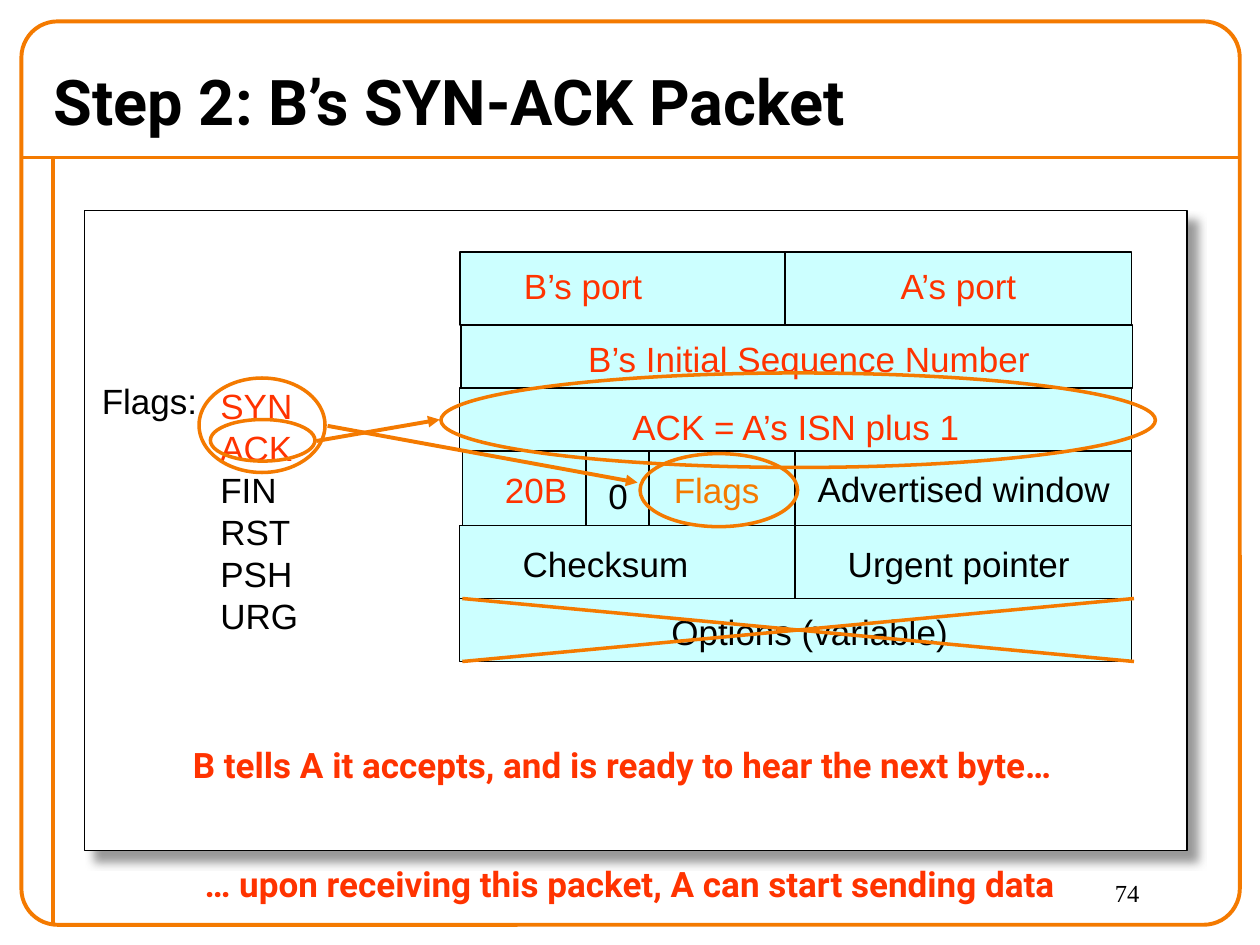
"""Build the slide on the SYN-ACK packet of the TCP handshake."""
import pptx
import pptx.util
import pptx.dml.color
import pptx.enum.shapes
import pptx.enum.text
import pptx.oxml
import pptx.oxml.ns
from lxml import etree

Inches, Pt = pptx.util.Inches, pptx.util.Pt
RGB = pptx.dml.color.RGBColor
KIND = pptx.enum.shapes.MSO_SHAPE
TEXT = pptx.enum.text
ORANGE = RGB(0xF4, 0x7A, 0x00)
RED = RGB(0xFF, 0x33, 0x00)
BLACK = RGB(0, 0, 0)
WHITE = RGB(0xFF, 0xFF, 0xFF)
CYAN = RGB(0xCC, 0xFF, 0xFF)

TITLE = "Step 2: B’s SYN-ACK Packet"
NUMBER = "74"
FRAME = (0.17, 0.17, 9.67, 7.17)
RULES = [(0.17, 1.25, 9.83, 1.25), (0.42, 1.25, 0.42, 7.33)]
PANEL = (0.67, 1.67, 8.75, 5.08)

TOP = 2
ROWS = [
    (0.58, [(3.65, 2.58), (6.23, 2.75)],
     [("B’s port", 4.06, 2.05, 1.16, RED), ("A’s port", 7.05, 2.05, 1.16, RED)]),
    (0.5, [(3.66, 5.33)],
     [("B’s Initial Sequence Number", 4.57, 2.63, 3.75, RED)]),
    (0.5, [(3.65, 5.33)],
     [("ACK = A’s ISN plus 1", 4.92, 3.17, 2.85, RED)]),
    (0.59, [(3.67, 2.67), (6.31, 2.67)],
     [("Advertised window", 6.39, 3.66, 2.55, BLACK),
      ("20B", 3.91, 3.67, 0.74, RED), ("0", 4.73, 3.72, 0.36, BLACK),
      ("Flags", 5.25, 3.67, 0.9, ORANGE)]),
    (0.58, [(3.65, 2.67), (6.31, 2.67)],
     [("Checksum", 4.05, 4.26, 1.55, BLACK),
      ("Urgent pointer", 6.63, 4.26, 2, BLACK)]),
    (0.5, [(3.65, 5.33)],
     [("Options (variable)", 5.23, 4.8, 2.43, BLACK)]),
]
SPLITS = [(x, 3.58, x, 4.17) for x in (4.65, 5.15)]
FLAGS = [("SYN", RED), ("ACK", RED), ("FIN", BLACK),
         ("RST", BLACK), ("PSH", BLACK), ("URG", BLACK)]
NOTES = [
    ("B tells A it accepts, and is ready to hear the next byte…", 1.18, 5.85, 7.52),
    ("… upon receiving this packet, A can start sending data", 1.28, 6.8, 7.44),
]
LINKS = [
    ((2.6, 3.38, 5.06, 3.83), [(1.58, 3, 1, 0.75), (5.08, 3.6, 1.25, 0.58)]),
    ((2.51, 3.5, 3.49, 3.33), [(1.67, 3.33, 0.83, 0.33), (3.5, 2.96, 5.67, 0.75)]),
]
CROSS = [(3.67, 4.75, 9, 5.25), (3.67, 5.25, 9, 4.75)]

deck = pptx.Presentation()
deck.slide_width, deck.slide_height = Inches(10), Inches(7.5)
slide = deck.slides.add_slide(deck.slide_layouts[6])
shapes = slide.shapes


def add_box(kind, at, fill, color, width):
    """Draw a preset shape, unfilled when fill is None."""
    box = shapes.add_shape(kind, *map(Inches, at))
    box.shadow.inherit = False
    if fill is None:
        box.fill.background()
    else:
        box.fill.solid()
        box.fill.fore_color.rgb = fill
    box.line.color.rgb = color
    box.line.width = Pt(width)
    return box


def add_line(ends, color, width, arrow=False):
    """Draw a straight line, with an arrowhead at its end if asked."""
    line = shapes.add_connector(
        pptx.enum.shapes.MSO_CONNECTOR.STRAIGHT, *map(Inches, ends))
    line.line.color.rgb = color
    line.line.width = Pt(width)
    props = line._element.spPr
    if arrow:
        etree.SubElement(props.find(pptx.oxml.ns.qn("a:ln")),
                         pptx.oxml.ns.qn("a:tailEnd"), type="triangle")
    etree.SubElement(props, pptx.oxml.ns.qn("a:effectLst"))


def add_text(items, at, size=20, face="Arial", bold=False, wrap=False,
             align=TEXT.PP_ALIGN.LEFT, anchor=TEXT.MSO_ANCHOR.TOP):
    """Write one paragraph for each pair of words and colour."""
    box = shapes.add_textbox(*map(Inches, at))
    frame = box.text_frame
    frame.word_wrap = wrap
    if not wrap:
        frame.auto_size = TEXT.MSO_AUTO_SIZE.SHAPE_TO_FIT_TEXT
    frame.vertical_anchor = anchor
    frame.text = "\n".join(words for words, _ in items)
    for para, (_, color) in zip(frame.paragraphs, items):
        para.alignment = align
        font = para.font
        font.name, font.size, font.bold = face, Pt(size), bold
        font.color.rgb = color


def add_shade(box):
    """Give a box a soft grey shadow down and to the right."""
    effect = box._element.spPr.find(pptx.oxml.ns.qn("a:effectLst"))
    effect.append(pptx.oxml.parse_xml(
        f'<a:outerShdw {pptx.oxml.ns.nsdecls("a")} blurRad="{Pt(5)}" '
        f'dist="{Pt(8.5)}" dir="2700000" algn="tl" rotWithShape="0">'
        '<a:srgbClr val="777777"><a:alpha val="75000"/></a:srgbClr>'
        '</a:outerShdw>'))


for ends in RULES:
    add_line(ends, ORANGE, 2.25)
border = add_box(KIND.ROUNDED_RECTANGLE, FRAME, None, ORANGE, 2.25)
border.adjustments[0] = 0.04
add_text([(NUMBER, BLACK)], (8.75, 6.92, 1, 0.42), 14, "Times New Roman", wrap=True)
add_text([(TITLE, BLACK)], (0.33, 0.42, 9.5, 0.75), 36, "Roboto", True, True,
         anchor=TEXT.MSO_ANCHOR.MIDDLE)
add_shade(add_box(KIND.RECTANGLE, PANEL, WHITE, BLACK, 0.75))

top = TOP
for height, cells, labels in ROWS:
    for left, width in cells:
        add_box(KIND.RECTANGLE, (left, top, width, height), CYAN, BLACK, 0.75)
    for words, left, y, width, color in labels:
        add_text([(words, color)], (left, y, width, 0.43))
    top += height
for ends in SPLITS:
    add_line(ends, BLACK, 0.75)

add_text([("Flags:", BLACK)], (0.71, 2.96, 0.96, 0.43))
add_text(FLAGS, (1.65, 3, 0.82, 2.1))
for words, left, y, width in NOTES:
    add_text([(words, RED)], (left, y, width, 0.43), face="Roboto", bold=True,
             align=TEXT.PP_ALIGN.CENTER)

for ends, rings in LINKS:
    add_line(ends, ORANGE, 2.25, True)
    for ring in rings:
        add_box(KIND.OVAL, ring, None, ORANGE, 2)
for ends in CROSS:
    add_line(ends, ORANGE, 2)

deck.save("out.pptx")
